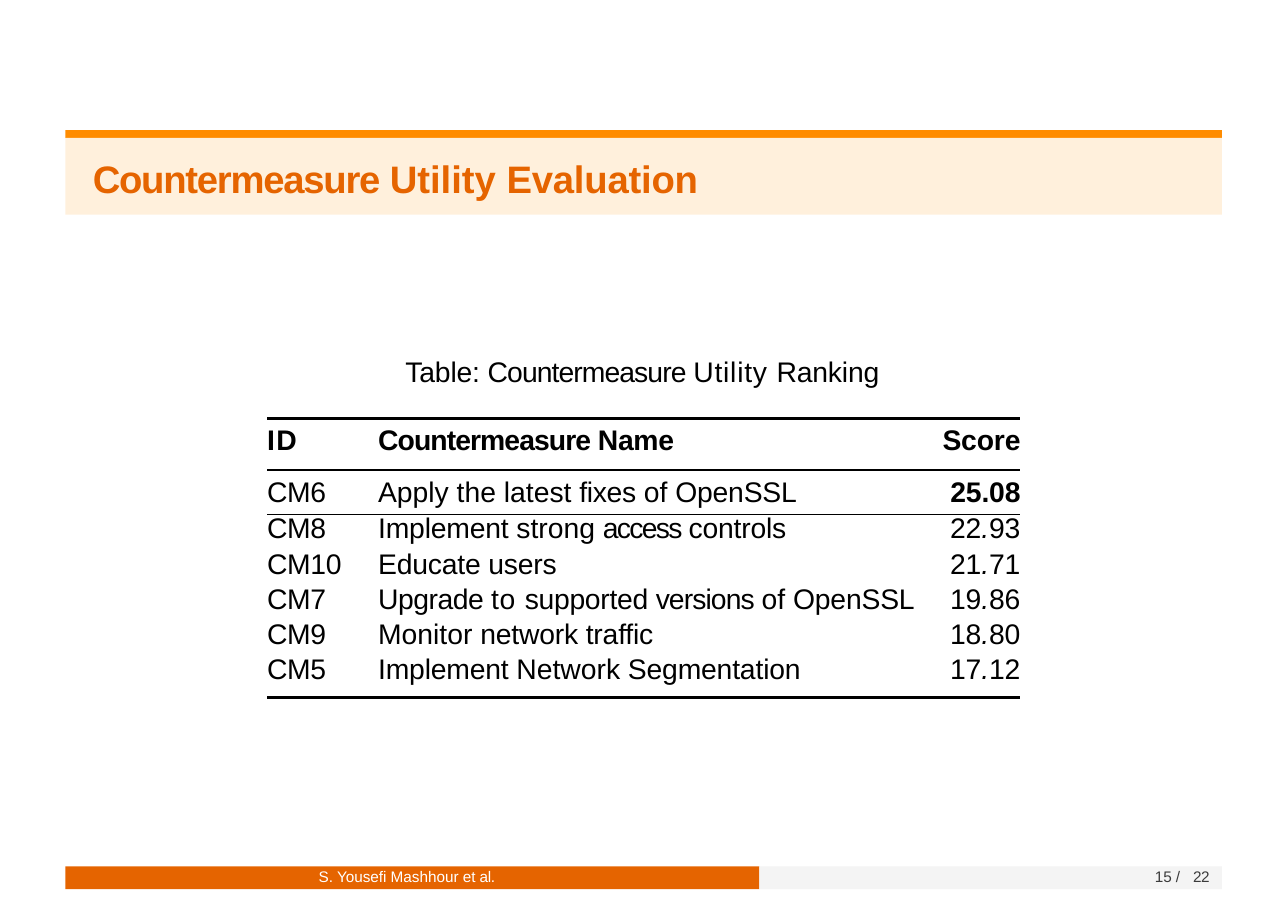
from lxml.etree import SubElement
from pptx import Presentation
from pptx.dml.color import RGBColor
from pptx.enum.shapes import MSO_SHAPE
from pptx.enum.text import MSO_ANCHOR, PP_ALIGN
from pptx.oxml.ns import qn
from pptx.util import Cm, Pt

COLORS = {
    "accent": "FF8C00",
    "title": "E56400",
    "band": "FFF0DC",
    "page": "F4F4F4",
    "page_text": "3B3B3B",
    "text": "000000",
    "white": "FFFFFF",
}
BODY_SIZE = 18.5
BODY_LINE = 19.9
FOOTER_LINE = 10.9

# Each text is a list of runs: (wording, letter spacing in points)
HEADERS = [
    [("ID", 0.9)],
    [("Countermeasure ", -0.6), ("Name", -0.2)],
    [("Score", -0.1)],
]
RANKING = [
    ("CM6", [("Apply the latest ", 0), ("fixes ", -0.2), ("of ", 0),
             ("OpenSSL", -0.1)], "25.08"),
    ("CM8", [("Implement ", -0.1), ("strong ", 0), ("access ", -1.1),
             ("controls", -0.1)], "22.93"),
    ("CM10", [("Educate ", -0.1), ("users", -0.1)], "21.71"),
    ("CM7", [("Upgrade ", -0.3), ("to ", 0.5), ("supported ", -0.2),
             ("versions ", -0.6), ("of ", 0), ("OpenSSL", -0.1)], "19.86"),
    ("CM9", [("Monitor ", 0), ("network traffic", -0.1)], "18.80"),
    ("CM5", [("Implement ", -0.1), ("Network ", 0),
             ("Segmentation", -0.1)], "17.12"),
]
COLUMN_WIDTHS = [2.13, 13.14, 2.1]
ROW_HEIGHTS = [1.19, 1.02] + [0.81] * 4 + [0.97]
RULES = [2.25, 1.5, 1.5, 0, 0, 0, 0, 2.25]  # above each row, then below the last


class SlideBuilder:
    def __init__(self, slide, font="Arial"):
        self.slide = slide
        self.font = font

    def bar(self, left, top, width, height, color):
        shape = self.slide.shapes.add_shape(
            MSO_SHAPE.RECTANGLE, Cm(left), Cm(top), Cm(width), Cm(height))
        shape.shadow.inherit = False
        shape.fill.solid()
        shape.fill.fore_color.rgb = RGBColor.from_string(COLORS[color])
        shape.line.fill.background()

    def run(self, paragraph, wording, spacing, size, color="text",
            bold=False, italic=False):
        run = paragraph.add_run()
        run.text = wording
        run.font.name = self.font
        run.font.size = Pt(size)
        run.font.bold = bold
        run.font.italic = italic
        run.font.color.rgb = RGBColor.from_string(COLORS[color])
        run._r.get_or_add_rPr().set("spc", str(round(spacing * 100)))

    def text(self, left, top, width, height, runs, size, color,
             bold=False, inset=(0.03, 0), line=None):
        box = self.slide.shapes.add_textbox(
            Cm(left), Cm(top), Cm(width), Cm(height))
        frame = box.text_frame
        frame.word_wrap = True
        frame.margin_left, frame.margin_top = Cm(inset[0]), Cm(inset[1])
        frame.margin_right = frame.margin_bottom = 0
        paragraph = frame.paragraphs[0]
        if line:
            paragraph.line_spacing = Pt(line)
        for wording, spacing in runs:
            self.run(paragraph, wording, spacing, size, color, bold)

    def borders(self, cell, above, below):
        properties = cell._tc.get_or_add_tcPr()
        sides = [("a:lnL", 0), ("a:lnR", 0), ("a:lnT", above), ("a:lnB", below)]
        for index, (side, width) in enumerate(sides):
            line = SubElement(properties, qn(side), w=str(int(Pt(width))))
            if width:
                fill = SubElement(line, qn("a:solidFill"))
                SubElement(fill, qn("a:srgbClr"), val=COLORS["text"])
            else:
                SubElement(line, qn("a:noFill"))
            properties.insert(index, line)

    def cell(self, cell, row, column):
        cell.fill.background()
        self.borders(cell, RULES[row], RULES[row + 1])
        cell.vertical_anchor = MSO_ANCHOR.TOP
        cell.margin_left = Cm(0.43 if column == 1 else 0)
        cell.margin_top = Cm(0.15 if row < 2 else 0)
        cell.margin_right = cell.margin_bottom = 0
        paragraph = cell.text_frame.paragraphs[0]
        paragraph.alignment = PP_ALIGN.RIGHT if column == 2 else PP_ALIGN.LEFT
        if row >= 2:
            paragraph.line_spacing = Pt(BODY_LINE)
        return paragraph

    def ranking_table(self, left, top):
        table = self.slide.shapes.add_table(
            len(ROW_HEIGHTS), len(COLUMN_WIDTHS), Cm(left), Cm(top),
            Cm(sum(COLUMN_WIDTHS)), Cm(sum(ROW_HEIGHTS))).table
        table.first_row = table.horz_banding = False
        for column, width in zip(table.columns, COLUMN_WIDTHS):
            column.width = Cm(width)
        for row, height in zip(table.rows, ROW_HEIGHTS):
            row.height = Cm(height)

        rows = [HEADERS]
        for identifier, name, score in RANKING:
            whole, decimals = score.split(".")
            best = score == RANKING[0][2]
            score_runs = ([(score, -0.1)] if best else
                          [(whole, -0.1), (".", -0.1), (decimals, -0.1)])
            rows.append([[(identifier, -0.2)], name, score_runs])
        for row, texts in enumerate(rows):
            for column, runs in enumerate(texts):
                paragraph = self.cell(table.cell(row, column), row, column)
                bold = row == 0 or (row == 1 and column == 2)
                for wording, spacing in runs:
                    self.run(paragraph, wording, spacing, BODY_SIZE,
                             bold=bold, italic=wording == ".")


def main():
    presentation = Presentation()
    presentation.slide_width, presentation.slide_height = Cm(29.7), Cm(21)
    slide = presentation.slides.add_slide(presentation.slide_layouts[6])
    builder = SlideBuilder(slide)

    # Title band
    builder.bar(1.51, 3, 26.67, 0.18, "accent")
    builder.bar(1.51, 3.18, 26.67, 1.77, "band")
    builder.text(1.51, 3.5, 26.67, 1.12,
                 [("Countermeasure ", -0.8), ("Utility ", 0), ("Evaluation", -0.1)],
                 25, "title", bold=True, inset=(0.63, 0.08))

    # Caption and table
    builder.text(9.32, 8.1, 11.2, 0.86,
                 [("Table: ", -0.1), ("Countermeasure ", -0.6),
                  ("Utility ", 0.5), ("Ranking", -0.1)],
                 BODY_SIZE, "text", inset=(0.03, 0.06))
    builder.ranking_table(6.16, 9.65)

    # Footer
    builder.bar(1.51, 19.97, 16, 0.53, "title")
    builder.bar(17.51, 19.97, 10.67, 0.53, "page")
    builder.text(7.32, 20.04, 4.5, 0.43,
                 [("S. Yousefi Mashhour et ", 0), ("al.", -0.2)],
                 10, "white", line=FOOTER_LINE)
    builder.text(26.6, 20.04, 1.4, 0.4,
                 [("15 ", 0), ("/ ", 2.8), ("22", -0.2)],
                 10, "page_text", line=FOOTER_LINE)

    presentation.save("out.pptx")


if __name__ == "__main__":
    main()
